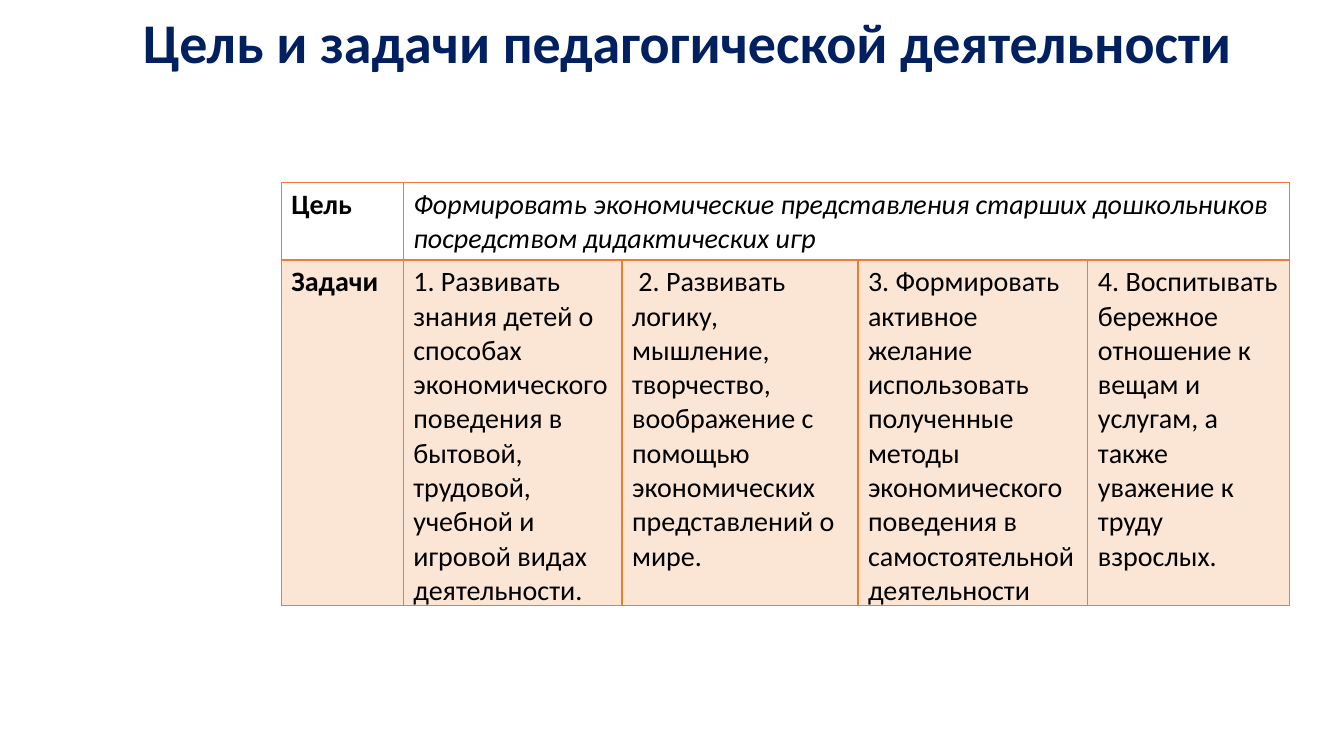
import pptx
import pptx.dml.color
import pptx.enum.text
import pptx.oxml
import pptx.oxml.ns
import pptx.util
from pptx.util import Inches

FONT = "Calibri"
ACCENT = "ED7D31"
GOAL = "Формировать экономические представления старших дошкольников посредством дидактических игр"
TASKS = [
    "1. Развивать знания детей о способах экономического поведения в бытовой, "
    "трудовой, учебной и игровой видах деятельности.",
    " 2. Развивать логику, мышление, творчество, воображение с помощью "
    "экономических представлений о мире.",
    "3. Формировать активное желание использовать полученные методы "
    "экономического поведения в самостоятельной деятельности",
    "4. Воспитывать бережное отношение к вещам и услугам, а также уважение к труду взрослых.",
]


def color(value):
    return pptx.dml.color.RGBColor.from_string(value)


def style_font(p, size, value, bold=False, italic=False):
    font = p.font
    font.name, font.size = FONT, pptx.util.Pt(size)
    font.bold, font.italic = bold, italic
    font.color.rgb = color(value)


def add_title(s, x, y, w, h):
    tf = s.shapes.add_textbox(Inches(x), Inches(y), Inches(w), Inches(h)).text_frame
    tf.word_wrap = True
    p = tf.paragraphs[0]
    p.text = "Цель и задачи педагогической деятельности"
    p.alignment = pptx.enum.text.PP_ALIGN.CENTER
    p.line_spacing = 0.9
    style_font(p, 40, "002060", bold=True)


def add_borders(cell, widths):
    """Draw the cell's sides; widths maps L, R, T and B to points."""
    tc_pr = cell._tc.get_or_add_tcPr()
    for side, width in widths.items():
        tc_pr.append(pptx.oxml.parse_xml(
            f'<a:ln{side} {pptx.oxml.ns.nsdecls("a")} w="{pptx.util.Pt(width)}">'
            f'<a:solidFill><a:srgbClr val="{ACCENT}"/></a:solidFill></a:ln{side}>'))


def tint(cell, percent):
    cell.fill.solid()
    cell.fill.fore_color.rgb = color(ACCENT)
    rgb = cell._tc.tcPr.find(pptx.oxml.ns.qn("a:solidFill"))[0]
    rgb.append(pptx.oxml.parse_xml(
        f'<a:alpha {pptx.oxml.ns.nsdecls("a")} val="{percent * 1000}"/>'))


def add_goals_table(s, x, y, w, h):
    rows = [["Цель", GOAL, "", "", ""], ["Задачи", *TASKS]]
    goal_height = 0.77
    table = s.shapes.add_table(2, 5, Inches(x), Inches(y), Inches(w), Inches(h)).table
    table.first_row = table.horz_banding = False
    for column, share in zip(table.columns, (0.121, 0.217, 0.234, 0.228, 0.2)):
        column.width = Inches(w * share)
    table.rows[0].height = Inches(goal_height)
    table.rows[1].height = Inches(h - goal_height)
    table.cell(0, 1).merge(table.cell(0, 4))

    for i, texts in enumerate(rows):
        is_goal = i == 0
        for j, text in enumerate(texts):
            cell = table.cell(i, j)
            # The line between the two rows is heavier
            add_borders(cell, {"L": 1, "R": 1, "T": 1 if is_goal else 2,
                               "B": 2 if is_goal else 1})
            if is_goal:
                cell.fill.background()
            else:
                tint(cell, 20)
                cell.margin_bottom = 0
            p = cell.text_frame.paragraphs[0]
            p.text = text
            style_font(p, 20, "000000", bold=j == 0, italic=is_goal and j > 0)


def main():
    prs = pptx.Presentation()
    prs.slide_width, prs.slide_height = Inches(13.33), Inches(7.5)
    s = prs.slides.add_slide(prs.slide_layouts[6])
    add_title(s, 0.3, 0.1, 13.03, 1.21)
    add_goals_table(s, 2.79, 1.81, 10, 4.2)
    prs.save("out.pptx")


if __name__ == "__main__":
    main()
